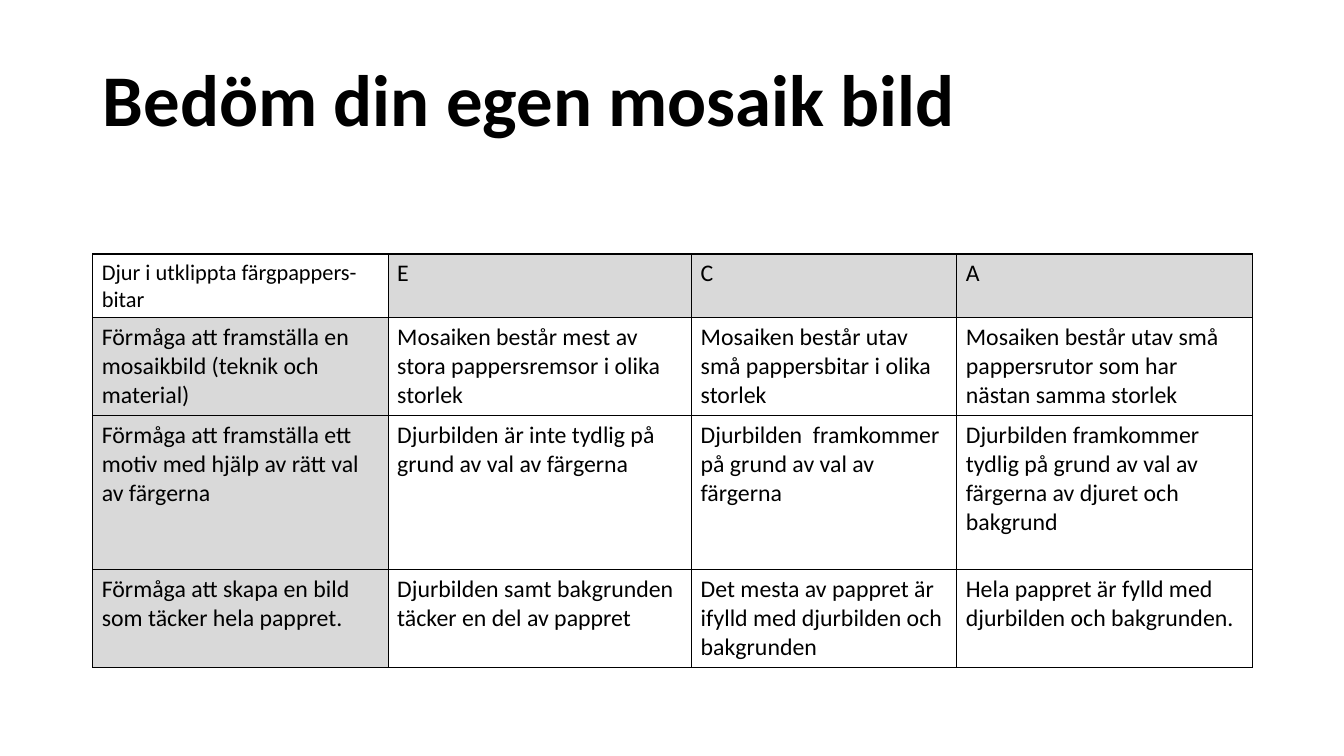
from lxml.etree import SubElement
from pptx import Presentation
from pptx.dml.color import RGBColor
from pptx.enum.text import MSO_ANCHOR
from pptx.oxml.ns import qn
from pptx.util import Inches, Pt

FONT = "Calibri"
COLORS = {"ink": "000000", "head": "D9D9D9", "page": "FFFFFF"}
COLS = [2.93, 3.01, 2.63, 2.93]
ROWS = [0.63, 0.97, 1.53, 0.97]
CELLS = [
    ["Djur i utklippta färgpappers-bitar", "E", "C", "A"],
    ["Förmåga att framställa en mosaikbild (teknik och material)",
     "Mosaiken består mest av stora pappersremsor i olika storlek",
     "Mosaiken består utav små pappersbitar i olika storlek",
     "Mosaiken består utav små pappersrutor som har nästan samma storlek"],
    ["Förmåga att framställa ett motiv med hjälp av rätt val av färgerna",
     "Djurbilden är inte tydlig på grund av val av färgerna",
     "Djurbilden  framkommer på grund av val av färgerna",
     "Djurbilden framkommer tydlig på grund av val av färgerna av djuret och bakgrund"],
    ["Förmåga att skapa en bild som täcker hela pappret.",
     "Djurbilden samt bakgrunden täcker en del av pappret",
     "Det mesta av pappret är ifylld med djurbilden och bakgrunden",
     "Hela pappret är fylld med djurbilden och bakgrunden."],
]


def color(name):
    """Return a named colour."""
    return RGBColor.from_string(COLORS[name])


def add_run(para, text, size, bold=False):
    """Add one styled run to a paragraph."""
    run = para.add_run()
    run.text = text
    run.font.name = FONT
    run.font.size = Pt(size)
    run.font.bold = bold
    run.font.color.rgb = color("ink")


def add_title(slide, left, top, width, height):
    """Place the heading in its box."""
    box = slide.shapes.add_textbox(
        Inches(left), Inches(top), Inches(width), Inches(height))
    frame = box.text_frame
    frame.word_wrap = True
    frame.vertical_anchor = MSO_ANCHOR.MIDDLE
    para = frame.paragraphs[0]
    para.line_spacing = 0.9
    para.space_after = Pt(6)
    add_run(para, "Bedöm din egen mosaik bild", 52, True)


def add_edges(cell):
    """Draw a thin line on all four sides of a cell."""
    props = cell._tc.get_or_add_tcPr()
    for side in ("a:lnL", "a:lnR", "a:lnT", "a:lnB"):
        line = SubElement(props, qn(side), w=str(Pt(1)))
        fill = SubElement(line, qn("a:solidFill"))
        SubElement(fill, qn("a:srgbClr"), val=COLORS["ink"])


def fill_cell(cell, text, row, col):
    """Style one cell and write its text."""
    cell.margin_left = cell.margin_right = Inches(0.09)
    cell.margin_top = cell.margin_bottom = Inches(0.05)
    add_edges(cell)
    corner = row == col == 0
    head = not corner and (row == 0 or col == 0)
    cell.fill.solid()
    cell.fill.fore_color.rgb = color("head" if head else "page")
    add_run(cell.text_frame.paragraphs[0], text, 16 if corner else 17)


def add_rubric(slide, left, top, width, height):
    """Place the grading table in its box."""
    frame = slide.shapes.add_table(
        len(ROWS), len(COLS), Inches(left), Inches(top),
        Inches(width), Inches(height))
    table = frame.table
    table.first_row = table.horz_banding = False
    for col, size in zip(table.columns, COLS):
        col.width = Inches(width * size / sum(COLS))
    for row, size in zip(table.rows, ROWS):
        row.height = Inches(height * size / sum(ROWS))
    for row, texts in enumerate(CELLS):
        for col, text in enumerate(texts):
            fill_cell(table.cell(row, col), text, row, col)


def main():
    """Build the slide and save it."""
    deck = Presentation()
    deck.slide_width = Inches(13.33)
    deck.slide_height = Inches(7.5)
    slide = deck.slides.add_slide(deck.slide_layouts[6])
    add_title(slide, 0.92, 0.2, 11.5, 1.65)
    add_rubric(slide, 0.92, 2.52, 11.5, 4.1)
    deck.save("out.pptx")


if __name__ == "__main__":
    main()
